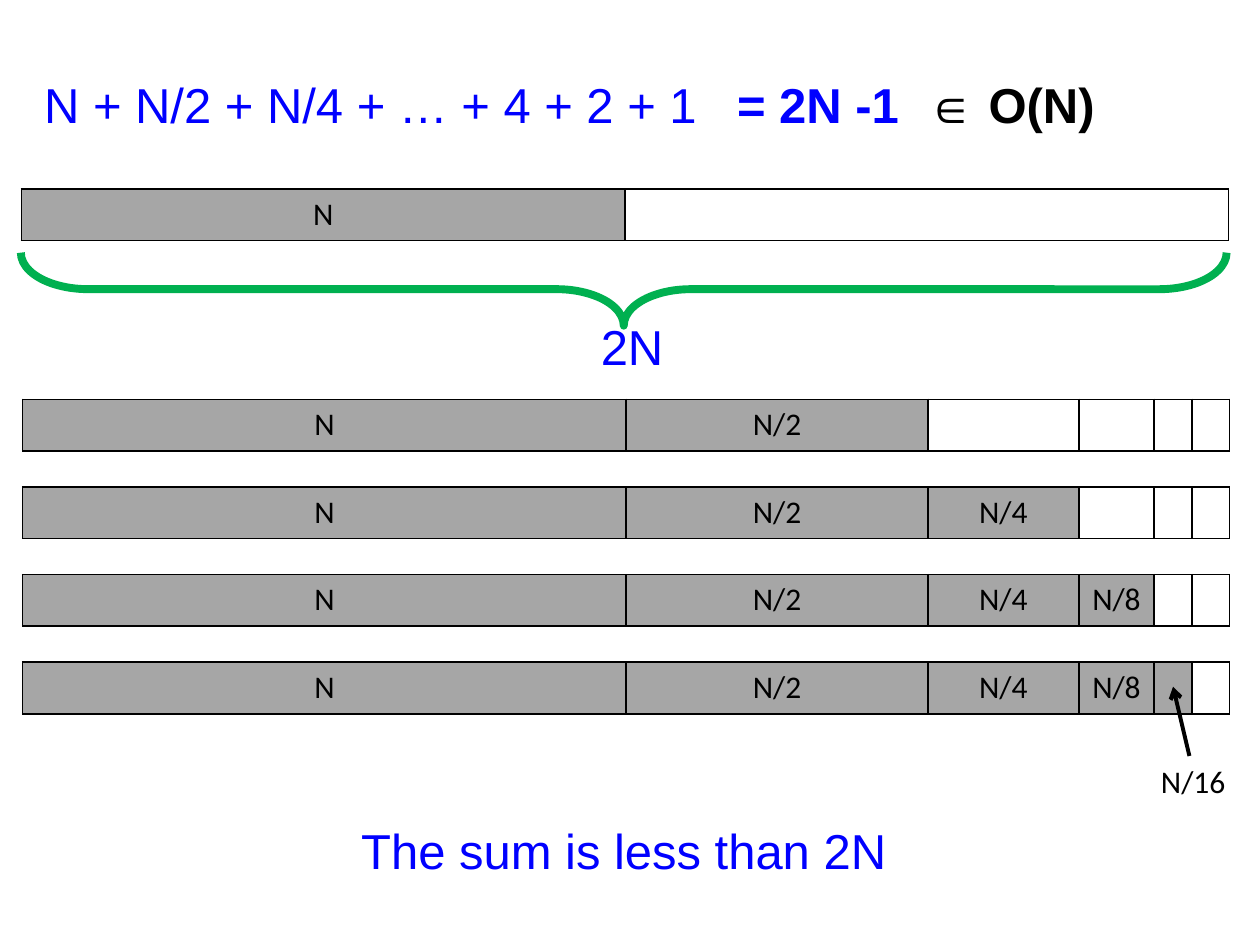
"""Build a slide showing that N + N/2 + N/4 + ... stays below 2N."""
from lxml import etree
from pptx import Presentation
from pptx.dml.color import RGBColor
from pptx.enum.shapes import MSO_CONNECTOR, MSO_SHAPE
from pptx.enum.text import MSO_ANCHOR, MSO_AUTO_SIZE, PP_ALIGN
from pptx.oxml.ns import qn
from pptx.util import Inches, Pt

LEFT, CENTER = PP_ALIGN.LEFT, PP_ALIGN.CENTER
TOP, MIDDLE = MSO_ANCHOR.TOP, MSO_ANCHOR.MIDDLE
NO_AUTOFIT = MSO_AUTO_SIZE.NONE
STRAIGHT = MSO_CONNECTOR.STRAIGHT
RIGHT_BRACE = MSO_SHAPE.RIGHT_BRACE

THEME = {
    "blue": "0000FF", "black": "000000", "gray": "A6A6A6", "green": "00B050",
    "head_font": "Arial", "label_font": "Calibri",
    "head_size": 28, "label_size": 18,
    "border": 1, "arrow": 2.25, "brace": 4.5,
}

FORMULA = [
    ("N + N/2 + N/4 + … + 4 + 2 + 1\t", "blue", False),
    ("= 2N -1\t", "blue", True),
    ("∈ O(N)", "black", True),
]
TOTAL = "2N"
CONCLUSION = "The sum is less than 2N"
SMALLEST = "N/16"
TERMS = ["N", "N/2", "N/4", "N/8", ""]

BAR_W, BAR_H = 9.58, 0.41
WHOLE_LEFT, WHOLE_TOP = 0.17, 1.5
SERIES_LEFT, SERIES_TOP, SERIES_STEP = 0.18, 3.17, 0.695
HALVES = [BAR_W / 2] * 2
SHARES = [BAR_W / 2 ** k for k in range(1, 6)] + [BAR_W / 2 ** 5]


def color(name):
    return RGBColor.from_string(THEME[name])


def add_run(p, text, kind, hue, bold=False):
    r = p.add_run()
    r.text = text
    r.font.name = THEME[kind + "_font"]
    r.font.size = Pt(THEME[kind + "_size"])
    r.font.bold = bold
    r.font.color.rgb = color(hue)


def write(shape, runs, kind, align, anchor=MIDDLE, spacing=0.7, wrap=True):
    tf = shape.text_frame
    tf.word_wrap = wrap
    tf.auto_size = NO_AUTOFIT
    tf.vertical_anchor = anchor
    p = tf.paragraphs[0]
    p.alignment = align
    p.line_spacing = spacing
    for text, hue, bold in runs:
        add_run(p, text, kind, hue, bold)


def add_text(s, box, text, kind, hue, align, **layout):
    tb = s.shapes.add_textbox(*map(Inches, box))
    write(tb, [(text, hue, False)], kind, align, **layout)


def set_borders(cell):
    tc_pr = cell._tc.get_or_add_tcPr()
    for side in ("a:lnL", "a:lnR", "a:lnT", "a:lnB"):
        ln = etree.SubElement(tc_pr, qn(side), w=str(Pt(THEME["border"])))
        fill = etree.SubElement(ln, qn("a:solidFill"))
        etree.SubElement(fill, qn("a:srgbClr"), val=THEME["black"])


def add_bar(s, left, top, widths, filled):
    frame = s.shapes.add_table(1, len(widths), *map(Inches, (left, top, BAR_W, BAR_H)))
    table = frame.table
    table.first_row = table.horz_banding = False
    table.rows[0].height = Inches(BAR_H)
    for i, width in enumerate(widths):
        table.columns[i].width = Inches(width)
        cell = table.cell(0, i)
        set_borders(cell)
        if i >= filled:
            cell.fill.background()
            continue
        cell.fill.solid()
        cell.fill.fore_color.rgb = color("gray")
        if TERMS[i]:
            p = cell.text_frame.paragraphs[0]
            p.alignment = CENTER
            add_run(p, TERMS[i], "label", "black")


def add_brace(s, box):
    brace = s.shapes.add_shape(RIGHT_BRACE, *map(Inches, box))
    brace.rotation = 90
    brace.adjustments[0] = 0.92
    brace.adjustments[1] = 0.5
    brace.shadow.inherit = False
    brace.fill.background()
    brace.line.color.rgb = color("green")
    brace.line.width = Pt(THEME["brace"])


def add_arrow(s, start, end):
    arrow = s.shapes.add_connector(STRAIGHT, *map(Inches, start + end))
    arrow.line.color.rgb = color("black")
    arrow.line.width = Pt(THEME["arrow"])
    etree.SubElement(arrow.line._get_or_add_ln(), qn("a:tailEnd"), type="arrow")
    etree.SubElement(arrow._element.spPr, qn("a:effectLst"))


def main():
    prs = Presentation()
    prs.slide_width, prs.slide_height = Inches(10), Inches(7.5)
    s = prs.slides.add_slide(prs.slide_layouts[5])

    title = s.shapes.title
    title.left, title.top, title.width, title.height = map(Inches, (0.25, 0.66, 10.07, 0.44))
    write(title, FORMULA, "head", LEFT)

    add_bar(s, WHOLE_LEFT, WHOLE_TOP, HALVES, 1)
    add_brace(s, (4.66, -2.49, 0.58, 9.57))
    add_text(s, (4.67, 2.59, 0.83, 0.43), TOTAL, "head", "blue", LEFT)

    for row in range(4):
        add_bar(s, SERIES_LEFT, SERIES_TOP + row * SERIES_STEP, SHARES, row + 2)

    add_text(s, (9.11, 6, 0.72, 0.4), SMALLEST, "label", "black", CENTER,
             anchor=TOP, spacing=1.0, wrap=False)
    add_arrow(s, (9.44, 6), (9.31, 5.45))
    add_text(s, (1.6, 6.58, 6.7, 0.44), CONCLUSION, "head", "blue", CENTER)
    prs.save("out.pptx")


if __name__ == "__main__":
    main()
